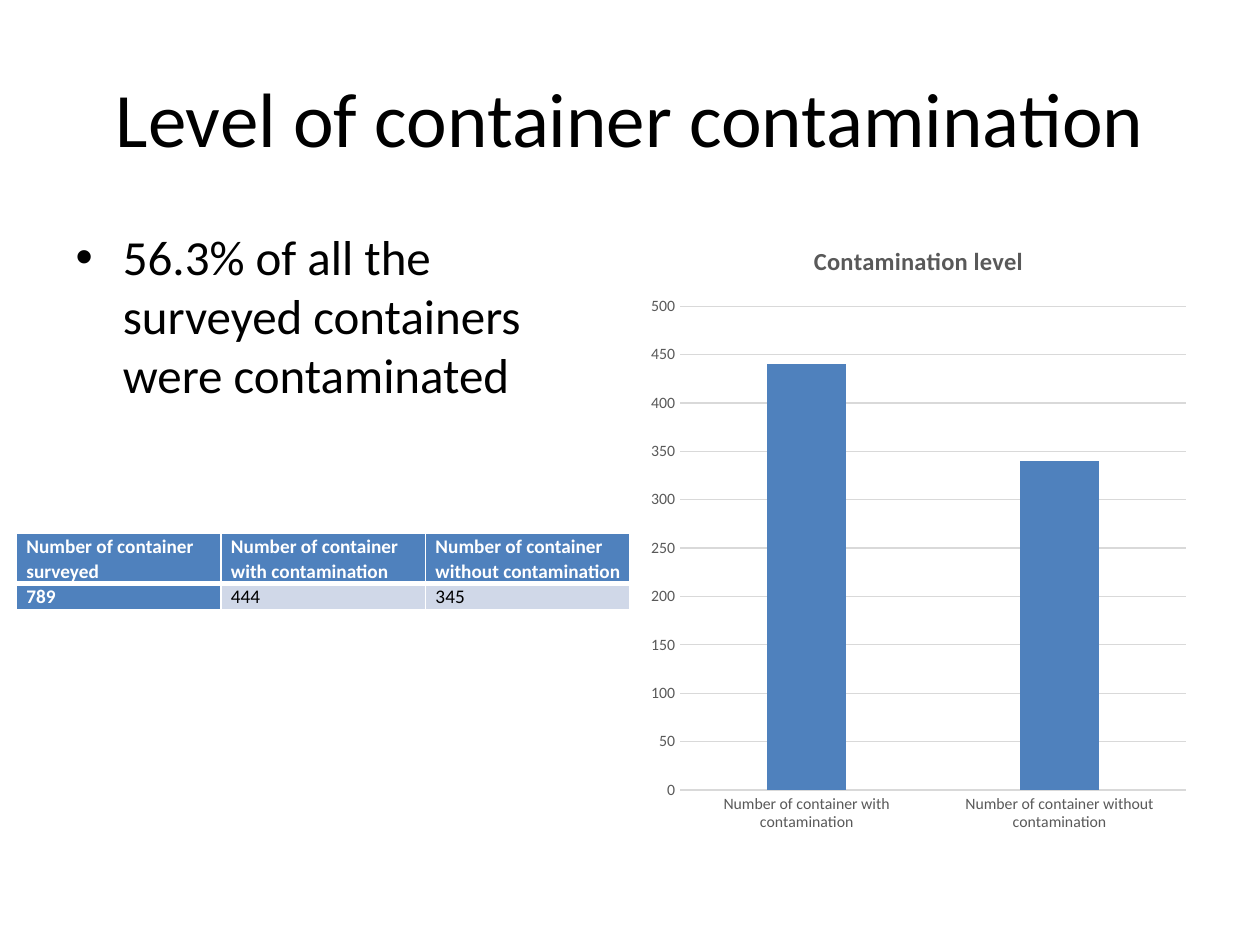
from lxml import etree
from pptx import Presentation
from pptx.chart.data import CategoryChartData
from pptx.dml.color import RGBColor
from pptx.enum.chart import XL_CHART_TYPE, XL_TICK_MARK
from pptx.enum.text import MSO_ANCHOR, PP_ALIGN
from pptx.oxml.ns import qn
from pptx.util import Inches, Pt

COLUMNS = XL_CHART_TYPE.COLUMN_CLUSTERED
NO_TICK = XL_TICK_MARK.NONE
MIDDLE = MSO_ANCHOR.MIDDLE
TOP = MSO_ANCHOR.TOP
CENTER = PP_ALIGN.CENTER
LEFT = PP_ALIGN.LEFT

FONT = "Calibri"
BLACK, WHITE, GRAY, RULE = "000000", "FFFFFF", "595959", "D9D9D9"
BLUE, PALE_BLUE = "4F81BD", "D0D8E8"

SURVEYED = "Number of container surveyed"
COUNTS = {
    "Number of container with contamination": 444,
    "Number of container without contamination": 345,
}
CHART_LEVELS = [440, 340]  # rounded to what the axis lets one read


def color(hex_string):
    return RGBColor.from_string(hex_string)


def style_font(font, size, hex_string, bold=False):
    font.name = FONT
    font.size = Pt(size)
    font.bold = bold
    font.color.rgb = color(hex_string)


def place(part, box):
    part.left, part.top, part.width, part.height = (Inches(n) for n in box)


def fill_placeholder(placeholder, box, text, size, anchor, align):
    place(placeholder, box)
    frame = placeholder.text_frame
    frame.text = text
    frame.vertical_anchor = anchor
    paragraph = frame.paragraphs[0]
    paragraph.alignment = align
    style_font(paragraph.runs[0].font, size, BLACK)


def add_contamination_chart(slide, box):
    data = CategoryChartData()
    data.categories = list(COUNTS)
    data.add_series("Series 1", CHART_LEVELS)
    chart = slide.shapes.add_chart(COLUMNS, *(Inches(n) for n in box), data).chart
    style_font(chart.font, 10, BLACK)
    chart.has_legend = False

    # Title
    chart.has_title = True
    title_frame = chart.chart_title.text_frame
    title_frame.text = "Contamination level"
    style_font(title_frame.paragraphs[0].runs[0].font, 14, GRAY, bold=True)

    # Columns
    plot = chart.plots[0]
    plot.gap_width = 219
    plot.overlap = -27
    plot.vary_by_categories = False
    columns_fill = plot.series[0].format.fill
    columns_fill.solid()
    columns_fill.fore_color.rgb = color(BLUE)

    # Axes
    counts_axis, category_axis = chart.value_axis, chart.category_axis
    for axis in (counts_axis, category_axis):
        axis.major_tick_mark = axis.minor_tick_mark = NO_TICK
        style_font(axis.tick_labels.font, 9, GRAY)
    counts_axis.minimum_scale = 0
    counts_axis.maximum_scale = 500
    counts_axis.major_unit = 50
    counts_axis.format.line.fill.background()
    for line in (counts_axis.major_gridlines.format.line, category_axis.format.line):
        line.color.rgb = color(RULE)
        line.width = Pt(0.75)


def set_borders(cell, widths):
    properties = cell._tc.get_or_add_tcPr()
    for side, width in widths.items():
        border = etree.SubElement(properties, qn(f"a:ln{side}"), w=str(Pt(width)))
        solid = etree.SubElement(border, qn("a:solidFill"))
        etree.SubElement(solid, qn("a:srgbClr"), val=WHITE)


def add_counts_table(slide, box):
    rows = [[SURVEYED, *COUNTS], [sum(COUNTS.values()), *COUNTS.values()]]
    table = slide.shapes.add_table(2, 3, *(Inches(n) for n in box)).table
    table.first_col = True
    table.rows[0].height = Inches(0.39)
    table.rows[1].height = Inches(0.2)
    for r, row in enumerate(rows):
        for c, value in enumerate(row):
            is_heading = r == 0 or c == 0
            cell = table.cell(r, c)
            cell.margin_left = Inches(0.08)
            cell.margin_right = Inches(0.07)
            cell.margin_top = cell.margin_bottom = 0
            # A thick rule parts the header from the counts
            set_borders(cell, {"L": 1, "R": 1, "T": 3 if r else 1, "B": 1 if r else 3})
            cell.fill.solid()
            cell.fill.fore_color.rgb = color(BLUE if is_heading else PALE_BLUE)
            cell.text_frame.text = str(value)
            paragraph = cell.text_frame.paragraphs[0]
            paragraph.line_spacing = 1.07
            style_font(paragraph.runs[0].font, 11, WHITE if is_heading else BLACK, is_heading)


def main():
    presentation = Presentation()
    presentation.slide_width = Inches(10)
    presentation.slide_height = Inches(7.5)
    slide = presentation.slides.add_slide(presentation.slide_layouts[1])

    # Title and finding
    title, finding = slide.placeholders
    fill_placeholder(title, (0.5, 0.3, 9, 1.25),
                     "Level of container contamination", 44, MIDDLE, CENTER)
    fill_placeholder(finding, (0.5, 1.75, 4.42, 4.95),
                     "56.3% of all the surveyed containers were contaminated", 28, TOP, LEFT)

    # Counts as chart and table
    add_contamination_chart(slide, (5.08, 1.75, 4.42, 4.95))
    add_counts_table(slide, (0.13, 4.23, 4.87, 0.59))
    presentation.save("out.pptx")


if __name__ == "__main__":
    main()
